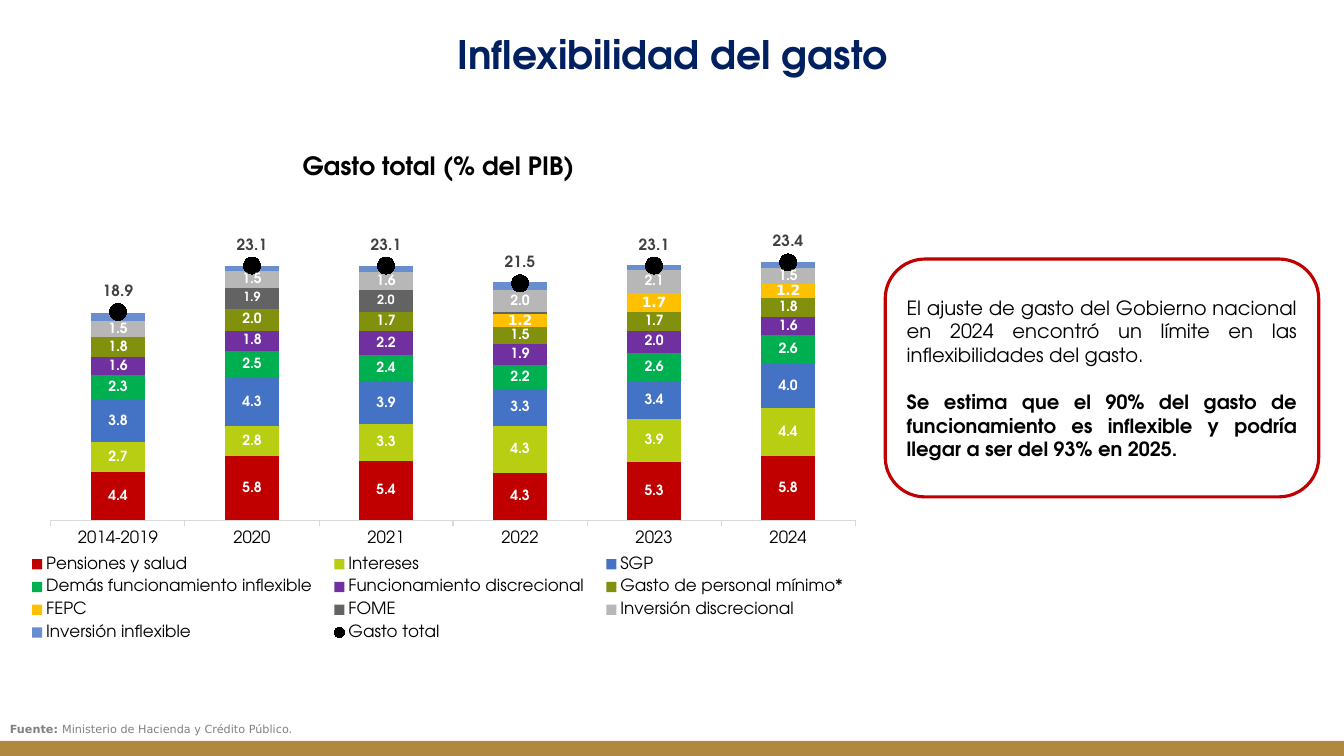
from pptx import Presentation
from pptx.chart.data import CategoryChartData
from pptx.dml.color import RGBColor
from pptx.enum.chart import (XL_CHART_TYPE, XL_LABEL_POSITION, XL_LEGEND_POSITION,
                             XL_MARKER_STYLE, XL_TICK_MARK)
from pptx.enum.shapes import MSO_SHAPE
from pptx.enum.text import MSO_ANCHOR, PP_ALIGN
from pptx.oxml import parse_xml
from pptx.oxml.ns import nsdecls
from pptx.util import Inches, Pt

CENTER, JUSTIFY, LEFT = PP_ALIGN.CENTER, PP_ALIGN.JUSTIFY, PP_ALIGN.LEFT
TOP, MIDDLE = MSO_ANCHOR.TOP, MSO_ANCHOR.MIDDLE

# Content
TITLE = "Inflexibilidad del gasto"
CHART_TITLE = "Gasto total (% del PIB)"
MESSAGES = [
    ("El ajuste de gasto del Gobierno nacional en 2024 encontró un límite "
     "en las inflexibilidades del gasto.", False),
    ("Se estima que el 90% del gasto de funcionamiento es inflexible y podría "
     "llegar a ser del 93% en 2025.", True),
]
SOURCE = [("Fuente: ", True), ("Ministerio de Hacienda y Crédito Público.", False)]
YEARS = ["2014-2019", "2020", "2021", "2022", "2023", "2024"]
SPENDING = [  # name, colour, values
    ("Pensiones y salud", "C00000", (4.4, 5.8, 5.4, 4.3, 5.3, 5.8)),
    ("Intereses", "B8CE12", (2.7, 2.8, 3.3, 4.3, 3.9, 4.4)),
    ("SGP", "4472C4", (3.8, 4.3, 3.9, 3.3, 3.4, 4.0)),
    ("Demás funcionamiento inflexible", "00B050", (2.3, 2.5, 2.4, 2.2, 2.6, 2.6)),
    ("Funcionamiento discrecional", "7030A0", (1.6, 1.8, 2.2, 1.9, 2.0, 1.6)),
    ("Gasto de personal mínimo*", "81910D", (1.8, 2.0, 1.7, 1.5, 1.7, 1.8)),
    ("FEPC", "FFC000", (0, 0, 0, 1.2, 1.7, 1.2)),
    ("FOME", "636363", (0, 1.9, 2.0, 0.2, 0, 0)),
    ("Inversión discrecional", "B7B7B7", (1.5, 1.5, 1.6, 2.0, 2.1, 1.5)),
    ("Inversión inflexible", "698ED0", (0.7, 0.5, 0.6, 0.7, 0.5, 0.5)),
]
TOTAL = ("Gasto total", (18.9, 23.1, 23.1, 21.5, 23.1, 23.4))
UNLABELLED = "Inversión inflexible"
SMALLEST_LABEL = 0.5
NUMBER_FORMAT = "#,##0.0"
# Shares of the chart's size
PLOT_AREA = {"x": 0.051, "y": 0.127, "w": 0.934, "h": 0.591}
LEGEND_AREA = {"x": 0.01, "y": 0.78, "w": 0.98, "h": 0.21}


class Theme:
    font, plain_font = "TeX Gyre Adventor", "DejaVu Sans"
    navy, red, gold = "002060", "C00000", "B08840"
    black, white, gray = "000000", "FFFFFF", "808080"
    dark, axis = "404040", "D9D9D9"
    title, subtitle, body, legend, total, label, small, source = 28, 18, 14, 12, 11, 10, 9, 8


def rgb(code):
    return RGBColor.from_string(code)


def style(font, size, color, bold=False, name=Theme.font):
    font.name, font.size, font.bold = name, Pt(size), bold
    font.color.rgb = rgb(color)


def place(shape, left, top, width, height):
    shape.left, shape.top = Inches(left), Inches(top)
    shape.width, shape.height = Inches(width), Inches(height)


def write(shape, text, size, color, anchor=TOP, align=CENTER):
    frame = shape.text_frame
    frame.word_wrap, frame.vertical_anchor = True, anchor
    para = frame.paragraphs[0]
    para.text, para.alignment = text, align
    style(para.font, size, color, True)


def show_labels(series, size, color, name=Theme.font):
    labels = series.data_labels
    labels.show_value = True
    labels.number_format, labels.number_format_is_linked = NUMBER_FORMAT, False
    style(labels.font, size, color, True, name)
    return labels


def set_layout(parent, position, area, target=""):
    for element in parent.xpath("c:layout"):
        parent.remove(element)
    modes = '<c:xMode val="edge"/><c:yMode val="edge"/>'
    shares = "".join(f'<c:{key} val="{share}"/>' for key, share in area.items())
    parent.insert(position, parse_xml(
        f'<c:layout {nsdecls("c")}><c:manualLayout>{target}{modes}{shares}'
        '</c:manualLayout></c:layout>'))


deck = Presentation()
deck.slide_width, deck.slide_height = Inches(13.33), Inches(7.5)
page = deck.slides.add_slide(deck.slide_layouts[5])
shapes = page.shapes

# Footer band and titles
band = shapes.add_shape(MSO_SHAPE.RECTANGLE, 0, Inches(7.35), deck.slide_width, Inches(0.15))
band.shadow.inherit = False
band.fill.solid()
band.fill.fore_color.rgb = rgb(Theme.gold)
band.line.fill.background()

place(shapes.title, 0.05, 0.25, 13.24, 0.57)
write(shapes.title, TITLE, Theme.title, Theme.navy)
heading = shapes.add_textbox(Inches(0.35), Inches(1.44), Inches(8), Inches(0.4))
write(heading, CHART_TITLE, Theme.subtitle, Theme.black)

# Message box
message_box = shapes.add_shape(MSO_SHAPE.ROUNDED_RECTANGLE, Inches(8.78), Inches(2.57),
                               Inches(4.3), Inches(2.36))
message_box.shadow.inherit = False
message_box.fill.background()
message_box.line.color.rgb = rgb(Theme.red)
message_box.line.width = Pt(2.25)
frame = message_box.text_frame
frame.word_wrap, frame.vertical_anchor = True, MIDDLE
for index, (text, bold) in enumerate(MESSAGES):
    para = frame.add_paragraph() if index else frame.paragraphs[0]
    para.text, para.alignment = text, JUSTIFY
    if index:
        para.space_before = Pt(17)
    style(para.font, Theme.body, Theme.black, bold)

# Stacked columns
data = CategoryChartData(number_format=NUMBER_FORMAT)
data.categories = YEARS
for name, color, values in SPENDING:
    data.add_series(name, values)
data.add_series(*TOTAL)
chart = shapes.add_chart(XL_CHART_TYPE.COLUMN_STACKED, Inches(0.07), Inches(1.84),
                         Inches(8.54), Inches(4.63), data).chart
chart.has_title = False
style(chart.font, Theme.label, Theme.black)
columns = chart.plots[0]
columns.gap_width, columns.overlap, columns.vary_by_categories = 150, 100, False
for series, (name, color, values) in zip(columns.series, SPENDING):
    series.format.fill.solid()
    series.format.fill.fore_color.rgb = rgb(color)
    if name == UNLABELLED:
        continue
    show_labels(series, Theme.small if name == "FOME" else Theme.label, Theme.white,
                Theme.plain_font if name == "FEPC" else Theme.font)
    hidden = [point for point, value in enumerate(values) if value < SMALLEST_LABEL]
    label_list = series.data_labels._element
    for position, point in enumerate(hidden):
        label_list.insert(position, parse_xml(
            f'<c:dLbl {nsdecls("c")}><c:idx val="{point}"/><c:delete val="1"/></c:dLbl>'))

# Total as markers on the same axes
plot_area = chart.element.xpath("c:chart/c:plotArea")[0]
bar_group = plot_area.xpath("c:barChart")[0]
total_series = bar_group.xpath("c:ser")[-1]
for element in total_series.xpath("c:invertIfNegative"):
    total_series.remove(element)
axis_ids = "".join(f'<c:axId val="{number}"/>' for number in bar_group.xpath("c:axId/@val"))
line_group = parse_xml(
    f'<c:lineChart {nsdecls("c")}><c:grouping val="standard"/><c:varyColors val="0"/>'
    f'<c:marker val="1"/>{axis_ids}</c:lineChart>')
line_group.insert(2, total_series)
bar_group.addnext(line_group)
total = chart.plots[1].series[0]
total.smooth = False
total.format.line.fill.background()
total.marker.style, total.marker.size = XL_MARKER_STYLE.CIRCLE, 12
total.marker.format.fill.solid()
total.marker.format.fill.fore_color.rgb = rgb(Theme.black)
total.marker.format.line.color.rgb = rgb(Theme.black)
show_labels(total, Theme.total, Theme.dark).position = XL_LABEL_POSITION.ABOVE

# Axes, legend and plot area
value_axis, year_axis = chart.value_axis, chart.category_axis
value_axis.minimum_scale, value_axis.maximum_scale = 0, 25
value_axis.has_major_gridlines = False
value_axis.visible = False
year_axis.major_tick_mark = XL_TICK_MARK.OUTSIDE
year_axis.format.line.color.rgb = rgb(Theme.axis)
year_axis.format.line.width = Pt(0.75)
style(year_axis.tick_labels.font, Theme.legend, Theme.black)
chart.has_legend = True
chart.legend.position = XL_LEGEND_POSITION.BOTTOM
chart.legend.include_in_layout = False
style(chart.legend.font, Theme.legend, Theme.black)
set_layout(plot_area, 0, PLOT_AREA, '<c:layoutTarget val="inner"/>')
set_layout(chart.element.xpath("c:chart/c:legend")[0], 1, LEGEND_AREA)

# Source
source_box = shapes.add_textbox(0, Inches(7.04), Inches(5.46), Inches(0.4))
frame = source_box.text_frame
frame.word_wrap, frame.vertical_anchor = True, MIDDLE
para = frame.paragraphs[0]
para.alignment, para.line_spacing = LEFT, 0.9
for text, bold in SOURCE:
    span = para.add_run()
    span.text = text
    style(span.font, Theme.source, Theme.gray, bold, Theme.plain_font)

deck.save("out.pptx")
